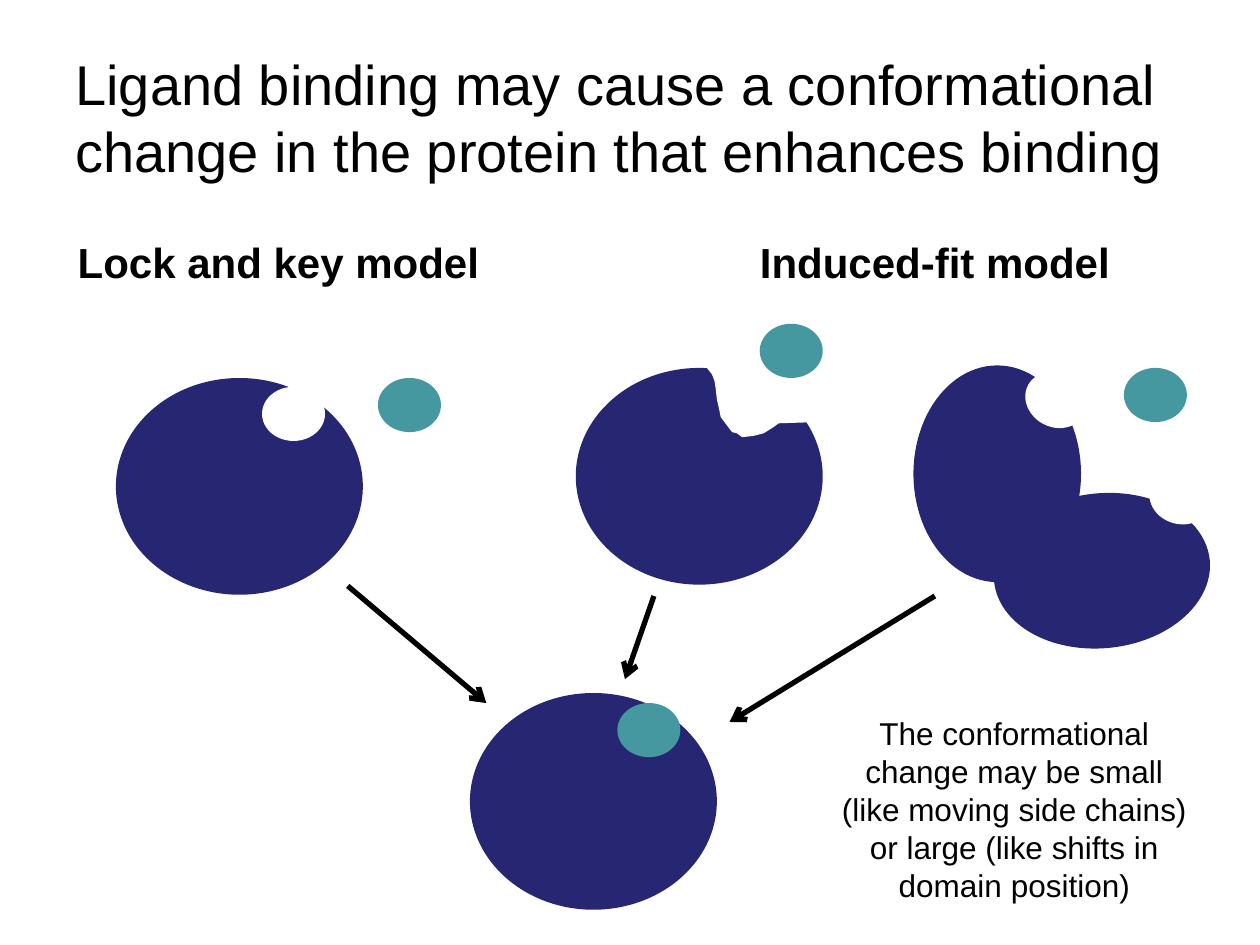
from lxml import etree
from pptx import Presentation
from pptx.dml.color import RGBColor
from pptx.enum.shapes import MSO_CONNECTOR, MSO_SHAPE
from pptx.enum.text import MSO_ANCHOR, MSO_AUTO_SIZE, PP_ALIGN
from pptx.oxml.ns import qn
from pptx.util import Inches, Pt

ELLIPSE = MSO_SHAPE.OVAL
STRAIGHT = MSO_CONNECTOR.STRAIGHT
LEFT, CENTER = PP_ALIGN.LEFT, PP_ALIGN.CENTER
TOP, MIDDLE = MSO_ANCHOR.TOP, MSO_ANCHOR.MIDDLE
GROW = MSO_AUTO_SIZE.SHAPE_TO_FIT_TEXT

PROTEIN, LIGAND, WHITE, BLACK = "262673", "4597A0", "FFFFFF", "000000"
PROTEIN_SIZE = (1.96, 1.72)
LIGAND_SIZE = (0.5, 0.43)

# Outline of the irregular open pocket, clockwise from its left rim
POCKET = [
    (5.56, 2.88), (5.61, 2.92), (5.65, 2.97), (5.67, 3.02), (5.68, 3.08),
    (5.69, 3.17), (5.71, 3.26), (5.72, 3.31), (5.78, 3.39), (5.81, 3.43),
    (5.85, 3.44), (5.89, 3.47), (5.98, 3.46), (6.06, 3.44), (6.14, 3.39),
    (6.18, 3.36), (6.49, 3.35), (6.51, 3.24), (6.49, 3.01), (6.44, 2.93),
    (6.4, 2.85), (6.33, 2.78), (6.25, 2.74), (5.88, 2.75), (5.82, 2.81),
    (5.74, 2.85),
]


def color(value):
    return RGBColor.from_string(value)


class Page:
    """The current slide with the font and fills shared by its elements."""

    font = "Arial"

    def __init__(self, deck):
        self.slide = deck.slides.add_slide(deck.slide_layouts[6])
        self.shapes = self.slide.shapes

    def group(self):
        return self.shapes.add_group_shape().shapes

    def paint(self, shape, fill):
        shape.shadow.inherit = False
        shape.fill.solid()
        shape.fill.fore_color.rgb = color(fill)
        shape.line.fill.background()

    def ellipse(self, left, top, size, fill, rotation=0, parent=None):
        shapes = self.shapes if parent is None else parent
        shape = shapes.add_shape(ELLIPSE, Inches(left), Inches(top), *map(Inches, size))
        shape.rotation = rotation
        self.paint(shape, fill)

    def outline(self, points, fill, parent):
        corners = [(Inches(x), Inches(y)) for x, y in points]
        builder = parent.build_freeform(*corners[0])
        builder.add_line_segments(corners[1:], close=True)
        self.paint(builder.convert_to_shape(), fill)

    def text(self, text, left, top, width, height, *, size, bold=False,
             align=CENTER, anchor=TOP, wrap=True, grow=True):
        box = self.shapes.add_textbox(*map(Inches, (left, top, width, height)))
        frame = box.text_frame
        frame.word_wrap = wrap
        frame.vertical_anchor = anchor
        if grow:
            frame.auto_size = GROW
        para = frame.paragraphs[0]
        para.alignment = align
        span = para.add_run()
        span.text = text
        span.font.name = self.font
        span.font.size = Pt(size)
        span.font.bold = bold
        span.font.color.rgb = color(BLACK)

    def arrow(self, start, end):
        line = self.shapes.add_connector(STRAIGHT, *map(Inches, start + end))
        line.line.color.rgb = color(BLACK)
        line.line.width = Pt(3)
        etree.SubElement(line.line._get_or_add_ln(), qn("a:tailEnd"), type="arrow")
        etree.SubElement(line._element.spPr, qn("a:effectLst"))


def main():
    deck = Presentation()
    deck.slide_width, deck.slide_height = Inches(10), Inches(7.5)
    page = Page(deck)

    page.text("Ligand binding may cause a conformational change in the protein "
              "that enhances binding", 0.5, 0.3, 9, 1.25,
              size=32, align=LEFT, anchor=MIDDLE, grow=False)
    page.text("Lock and key model", 0.5, 1.83, 3.42, 0.5, size=24, bold=True, wrap=False)
    page.text("Induced-fit model", 5.92, 1.83, 3, 0.5, size=24, bold=True, wrap=False)
    page.text("The conformational change may be small (like moving side chains) "
              "or large (like shifts in domain position)", 6.57, 5.62, 2.96, 1.62, size=18)

    # Bound complex
    page.ellipse(3.73, 5.5, PROTEIN_SIZE, PROTEIN)

    # Lock and key: the pocket already fits
    rigid = page.group()
    page.ellipse(0.92, 3, PROTEIN_SIZE, PROTEIN, parent=rigid)
    page.ellipse(2.08, 3.07, LIGAND_SIZE, WHITE, parent=rigid)

    # Induced fit: side chains move
    flexible = page.group()
    page.ellipse(4.57, 2.92, PROTEIN_SIZE, PROTEIN, parent=flexible)
    page.ellipse(5.74, 2.99, LIGAND_SIZE, WHITE, parent=flexible)
    page.outline(POCKET, WHITE, flexible)

    # Induced fit: domains shift
    domains = page.group()
    page.ellipse(7.25, 2.9, (1.33, 1.72), PROTEIN, parent=domains)
    page.ellipse(8.13, 3.67, (1.23, 1.72), PROTEIN, 84.3, domains)
    page.ellipse(8.13, 2.96, LIGAND_SIZE, WHITE, 28, domains)
    page.ellipse(9.12, 3.73, LIGAND_SIZE, WHITE, 14.7, domains)

    for left, top in [(3, 3), (4.9, 5.58), (8.92, 2.92), (6.03, 2.57)]:
        page.ellipse(left, top, LIGAND_SIZE, LIGAND)

    for start, end in [((7.42, 4.73), (5.79, 5.73)),
                       ((5.19, 4.73), (4.96, 5.39)),
                       ((2.76, 4.65), (3.86, 5.58))]:
        page.arrow(start, end)

    deck.save("out.pptx")


if __name__ == "__main__":
    main()
